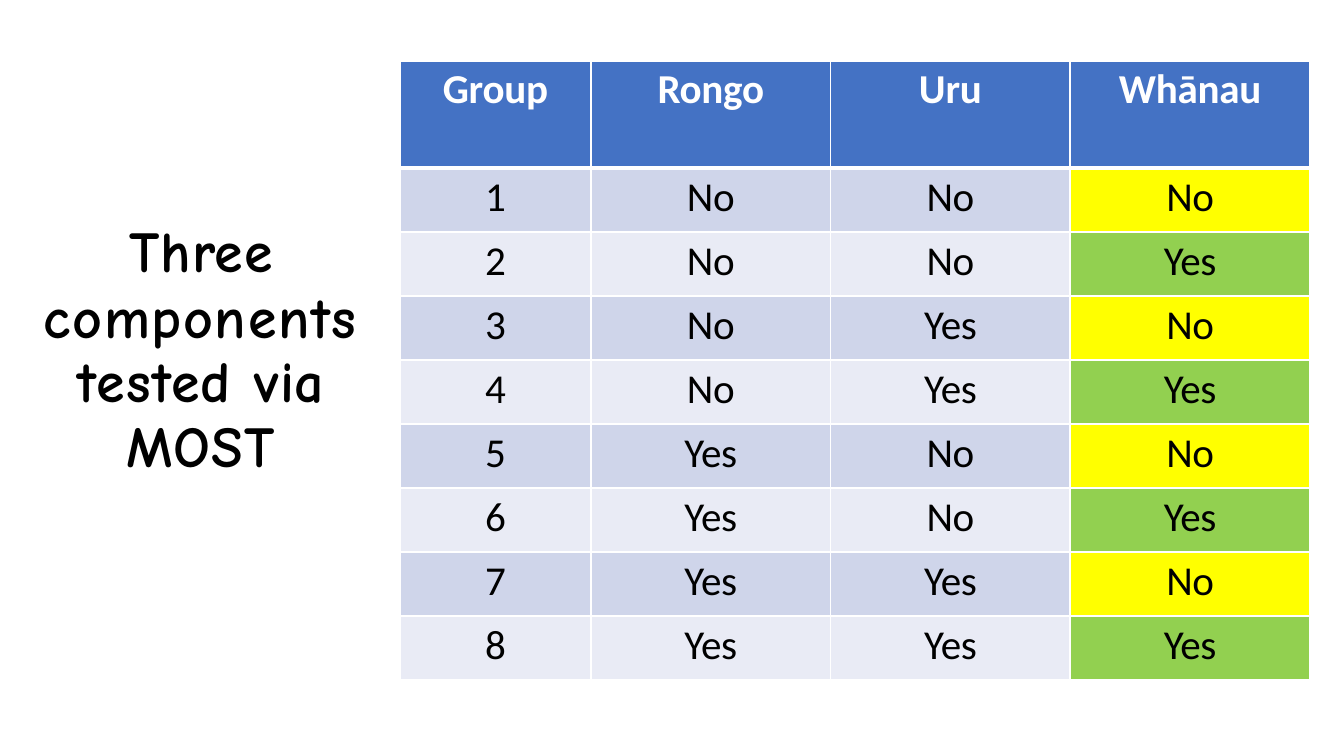
"""Build a slide listing the eight groups that test three components."""
from itertools import product

from lxml import etree
from pptx import Presentation, util as u
from pptx.dml.color import RGBColor
from pptx.enum import text
from pptx.oxml import ns

TITLE = [
    {"runs": [("Three", 60)], "format": {"line_spacing": u.Pt(35.6), "space_before": u.Pt(1.4)}},
    {"runs": [("components ", 90), ("tested ", 80), ("via ", 30), ("MOST", 80)],
     "format": {"line_spacing": 0.93, "space_before": u.Pt(1.2)}},
]
HEADER = ("Group", "Rongo", "Uru", "Whānau")
GROUPS = [(str(n), *levels) for n, levels in enumerate(product(("No", "Yes"), repeat=3), 1)]

BLACK = RGBColor(0x00, 0x00, 0x00)
WHITE = RGBColor(0xFF, 0xFF, 0xFF)
BLUE = RGBColor(0x44, 0x72, 0xC4)
BANDS = (RGBColor(0xCF, 0xD5, 0xEA), RGBColor(0xE9, 0xEB, 0xF5))
ANSWERS = {"No": RGBColor(0xFF, 0xFF, 0x00), "Yes": RGBColor(0x92, 0xD0, 0x50)}

SLIDE_W, SLIDE_H = 1344, 756
TITLE_BOX = (31, 216, 340, 266)
TABLE_LEFT, TABLE_TOP, TABLE_W = 400, 61, 910
GROUP_W, HEADER_H, ROW_H = 191, 107, 64
COMPONENT_W = (TABLE_W - GROUP_W) / 3


def px(n):
    return u.Emu(round(n * u.Inches(10) / SLIDE_W))


def apply(obj, values):
    for name, value in values.items():
        setattr(obj, name, value)


def add_run(p, words, spacing, color, **font):
    r = p.add_run()
    r.text = words
    apply(r.font, font)
    r.font.color.rgb = color
    r.font._element.set("spc", str(spacing))


def add_border(cell, side, points):
    ln = etree.SubElement(cell._tc.get_or_add_tcPr(), ns.qn(f"a:ln{side}"), w=str(u.Pt(points)))
    fill = etree.SubElement(ln, ns.qn("a:solidFill"))
    etree.SubElement(fill, ns.qn("a:srgbClr"), val=str(WHITE))


def add_title(s):
    sp = s.shapes.title
    apply(sp, dict(zip(("left", "top", "width", "height"), map(px, TITLE_BOX))))
    tf = sp.text_frame
    apply(tf, {"margin_left": 0, "margin_right": 0, "margin_top": px(2), "margin_bottom": 0,
               "word_wrap": True, "auto_size": text.MSO_AUTO_SIZE.NONE,
               "vertical_anchor": text.MSO_ANCHOR.TOP})
    for i, line in enumerate(TITLE):
        p = tf.add_paragraph() if i else tf.paragraphs[0]
        apply(p, {"alignment": text.PP_ALIGN.CENTER, **line["format"]})
        for words, spacing in line["runs"]:
            add_run(p, words, spacing, BLACK, name="Comic Neue", size=u.Pt(31), bold=True)


def fill_cell(cell, row, col, words):
    is_header = row == 0
    apply(cell, {"margin_left": 0, "margin_right": 0, "margin_bottom": 0,
                 "margin_top": px(4 if is_header else 5), "vertical_anchor": text.MSO_ANCHOR.TOP})
    for side in "LRTB":
        thick = (row, side) in ((0, "B"), (1, "T"))
        add_border(cell, side, 3 if thick else 1)
    if is_header:
        color = BLUE
    elif col == len(HEADER) - 1:
        color = ANSWERS[words]
    else:
        color = BANDS[(row - 1) % 2]
    cell.fill.solid()
    cell.fill.fore_color.rgb = color
    p = cell.text_frame.paragraphs[0]
    apply(p, {"alignment": text.PP_ALIGN.CENTER, "space_before": u.Pt(2.5)})
    spacing = -10 if is_header else -20 if col else 0
    add_run(p, words, spacing, WHITE if is_header else BLACK,
            name="Calibri", size=u.Pt(22), bold=is_header)


def add_groups(s):
    rows = [HEADER, *GROUPS]
    height = HEADER_H + ROW_H * len(GROUPS)
    table = s.shapes.add_table(len(rows), len(HEADER), px(TABLE_LEFT), px(TABLE_TOP),
                               px(TABLE_W), px(height)).table
    for i, column in enumerate(table.columns):
        column.width = px(COMPONENT_W if i else GROUP_W)
    for i, row in enumerate(rows):
        table.rows[i].height = px(ROW_H if i else HEADER_H)
        for j, words in enumerate(row):
            fill_cell(table.cell(i, j), i, j, words)


def main():
    prs = Presentation()
    apply(prs, {"slide_width": px(SLIDE_W), "slide_height": px(SLIDE_H)})
    s = prs.slides.add_slide(prs.slide_layouts[5])
    add_title(s)
    add_groups(s)
    prs.save("out.pptx")


if __name__ == "__main__":
    main()
